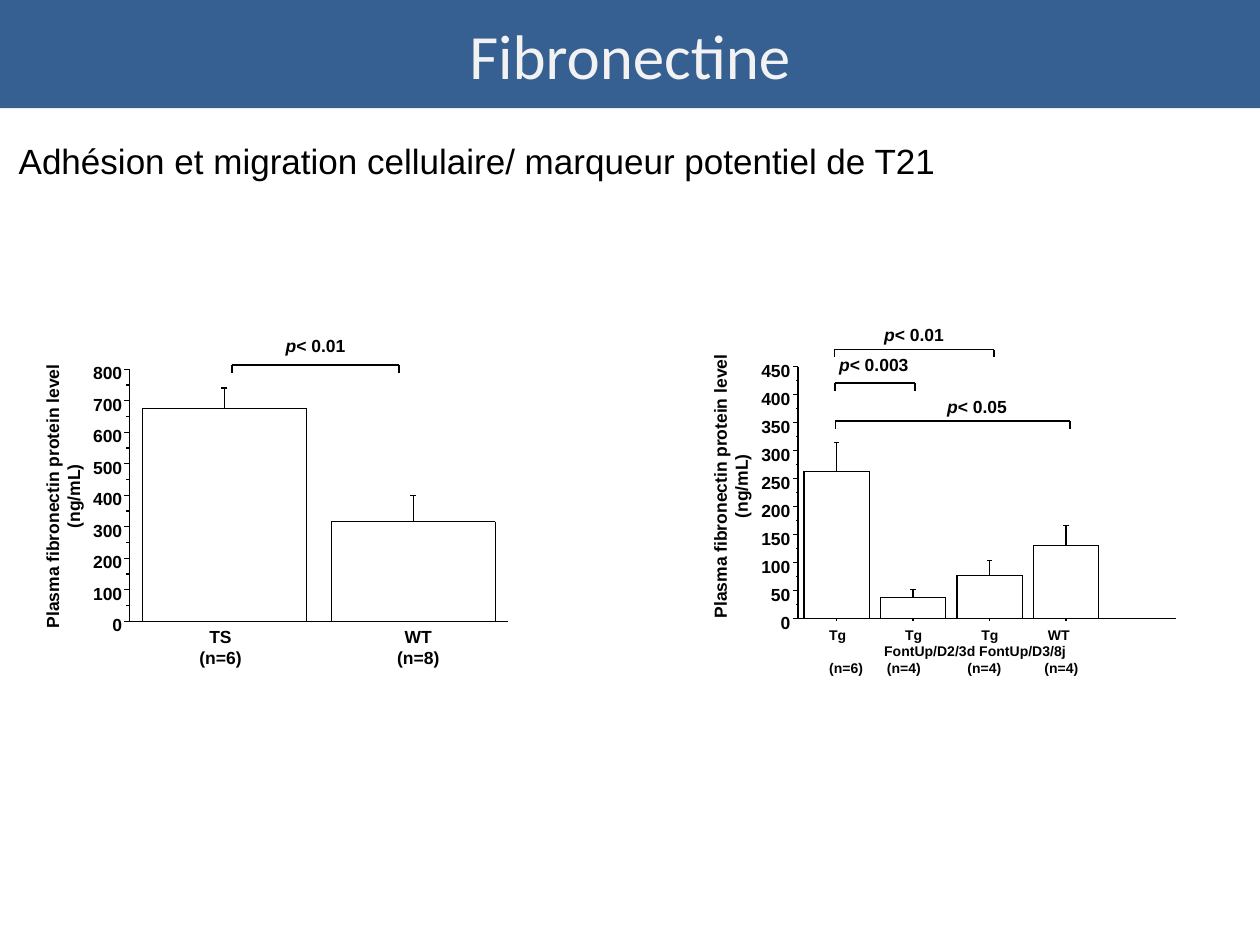
from lxml.etree import SubElement
from pptx import Presentation
from pptx.dml.color import RGBColor
from pptx.enum.shapes import MSO_CONNECTOR, MSO_SHAPE
from pptx.enum.text import MSO_ANCHOR, PP_ALIGN
from pptx.oxml.ns import qn
from pptx.util import Pt

TITLE = "Fibronectine"
SUBTITLE = "Adhésion et migration cellulaire/ marqueur potentiel de T21"
AXIS_TITLE = ["Plasma fibronectin protein level", "(ng/mL)"]

# Bars are (value, top of error bar); brackets are (left, right, y);
# p labels are (left, top, comparison).
CHARTS = [
    {
        "axis": (74.2, 355), "maximum": 800, "step": 100,
        "ticks": (3.6, 2.1), "first": 54, "spacing": 108, "bar_width": 93.6,
        "cap": 3.6, "foot": 0,
        "bars": [(676, 740), (316, 400)],
        "brackets": [(132.5, 228.2, 208.6)],
        "p_labels": [(138.2, 187.9, "< 0.01")],
        "title_at": (-40.3, 271.4),
    },
    {
        "axis": (456, 353.5), "maximum": 450, "step": 50,
        "ticks": (2.9, 1.4), "first": 22.1, "spacing": 43.7, "bar_width": 37.4,
        "cap": 3.2, "foot": 1.4,
        "bars": [(263, 315), (38, 52), (77, 104), (130, 166)],
        "brackets": [(477.4, 611.3, 240.8), (477, 522.7, 218.9),
                     (476.8, 568, 199.8)],
        "p_labels": [(516.2, 222.5, "< 0.05"), (457.2, 198.7, "< 0.003"),
                     (480.2, 181.4, "< 0.01")],
        "title_at": (341.3, 265.7),
    },
]
AXIS_LENGTH, AXIS_HEIGHT = 216, 144
LEFT_GROUPS = [(126, ["TS", "(n=6)"]), (239, ["WT", "(n=8)"])]
# Each row: text with tabs, tab positions
RIGHT_GROUPS = [
    ("Tg\tTg\tTg\tWT", (43.4, 86.9, 125)),
    ("\tFontUp/D2/3d FontUp/D3/8j", (31.4,)),
    ("(n=6)\t(n=4)\t(n=4)\t(n=4)", (33, 79, 123)),
]

LABEL = {"name": "Arial", "size": Pt(10), "bold": True}
SMALL_LABEL = {**LABEL, "size": Pt(8)}
NO_INSETS = {f"margin_{side}": 0 for side in ("left", "top", "right", "bottom")}


def color(hex_string):
    return RGBColor.from_string(hex_string)


def add_run(paragraph, text, formats, font_color="000000"):
    run = paragraph.add_run()
    run.text = text
    for name, value in formats.items():
        setattr(run.font, name, value)
    run.font.color.rgb = color(font_color)


def add_text(slide, box, lines, formats, align=PP_ALIGN.LEFT, frame_formats=NO_INSETS, wrap=False):
    """Add a text box; each line is a list of (text, extra font formats)."""
    shape = slide.shapes.add_textbox(*map(Pt, box))
    frame = shape.text_frame
    frame.word_wrap = wrap
    for name, value in frame_formats.items():
        setattr(frame, name, value)
    for index, line in enumerate(lines):
        paragraph = frame.add_paragraph() if index else frame.paragraphs[0]
        paragraph.alignment = align
        for text, extra in line:
            add_run(paragraph, text, {**formats, **extra})
    return shape


def plain(lines):
    return [[(line, {})] for line in lines]


def add_lines(slide, points, width=0.75):
    """Join consecutive points with straight connectors."""
    for start, end in zip(points, points[1:]):
        line = slide.shapes.add_connector(
            MSO_CONNECTOR.STRAIGHT, *map(Pt, (*start, *end)))
        line.line.color.rgb = color("000000")
        line.line.width = Pt(width)
        SubElement(line._element.spPr, qn("a:effectLst"))


def add_axes(slide, chart):
    left, base = chart["axis"]
    major, minor = chart["ticks"]
    count = chart["maximum"] // chart["step"]
    gap = AXIS_HEIGHT / count
    for index in range(count + 1):
        y = base - index * gap
        add_lines(slide, [(left, y), (left - major, y)])
        if index < count:
            add_lines(slide, [(left, y - gap / 2), (left - minor, y - gap / 2)])
        text = str(index * chart["step"])
        width = 5.6 * len(text)
        add_text(slide, (left - 4.4 - width, y - 4, width, 12.2),
                 plain([text]), LABEL, PP_ALIGN.RIGHT)
    add_lines(slide, [(left + AXIS_LENGTH, base), (left, base), (left, base - AXIS_HEIGHT)])


def add_bars(slide, chart):
    left, base = chart["axis"]
    scale = AXIS_HEIGHT / chart["maximum"]
    half, half_cap = chart["bar_width"] / 2, chart["cap"] / 2
    for index, (value, error) in enumerate(chart["bars"]):
        center = left + chart["first"] + index * chart["spacing"]
        top, error_top = base - value * scale, base - error * scale
        add_lines(slide, [(center - half, base), (center - half, top),
                          (center + half, top), (center + half, base)])
        add_lines(slide, [(center, error_top), (center, top)])
        add_lines(slide, [(center - half_cap, error_top), (center + half_cap, error_top)])
        if chart["foot"]:
            add_lines(slide, [(center, base), (center, base + chart["foot"])])


def add_annotations(slide, chart):
    for left, right, y in chart["brackets"]:
        add_lines(slide, [(left, y + 4.3), (left, y), (right, y), (right, y + 4.3)], 1)
    for left, top, comparison in chart["p_labels"]:
        add_text(slide, (left, top, 84.2, 19.4),
                 [[("p", {"italic": True}), (comparison, {})]],
                 LABEL, PP_ALIGN.CENTER, {}, True)
    title = add_text(slide, (*chart["title_at"], 152.6, 24.5),
                     plain(AXIS_TITLE), LABEL, PP_ALIGN.CENTER)
    title.rotation = 270


def add_tabs(paragraph, positions):
    tab_list = SubElement(paragraph._p.get_or_add_pPr(), qn("a:tabLst"))
    for position in positions:
        SubElement(tab_list, qn("a:tab"), pos=str(Pt(position)), algn="l")


def main():
    presentation = Presentation()
    presentation.slide_width, presentation.slide_height = Pt(720), Pt(540)
    slide = presentation.slides.add_slide(presentation.slide_layouts[6])

    banner = slide.shapes.add_shape(MSO_SHAPE.RECTANGLE, 0, 0, Pt(720), Pt(61.9))
    banner.shadow.inherit = False
    banner.fill.solid()
    banner.fill.fore_color.rgb = color("376092")
    banner.line.fill.background()
    banner.text_frame.vertical_anchor = MSO_ANCHOR.MIDDLE
    heading = banner.text_frame.paragraphs[0]
    heading.alignment = PP_ALIGN.CENTER
    add_run(heading, TITLE, {"name": "Calibri", "size": Pt(36)}, "F2F2F2")

    for chart in CHARTS:
        add_axes(slide, chart)
        add_bars(slide, chart)
        add_annotations(slide, chart)

    for center, lines in LEFT_GROUPS:
        add_text(slide, (center - 12.25, 357.8, 24.5, 24.5), plain(lines),
                 LABEL, PP_ALIGN.CENTER)
    groups = add_text(slide, (473.8, 357.8, 336, 41),
                      plain(text for text, _ in RIGHT_GROUPS), SMALL_LABEL, wrap=True)
    for paragraph, (_, positions) in zip(groups.text_frame.paragraphs, RIGHT_GROUPS):
        add_tabs(paragraph, positions)

    subtitle = add_text(slide, (3.6, 76.3, 648, 69.1), plain([SUBTITLE]),
                        {"name": "Arial", "size": Pt(20)}, frame_formats={}, wrap=True)
    subtitle.text_frame.paragraphs[0].space_before = Pt(4)
    presentation.save("out.pptx")


if __name__ == "__main__":
    main()
